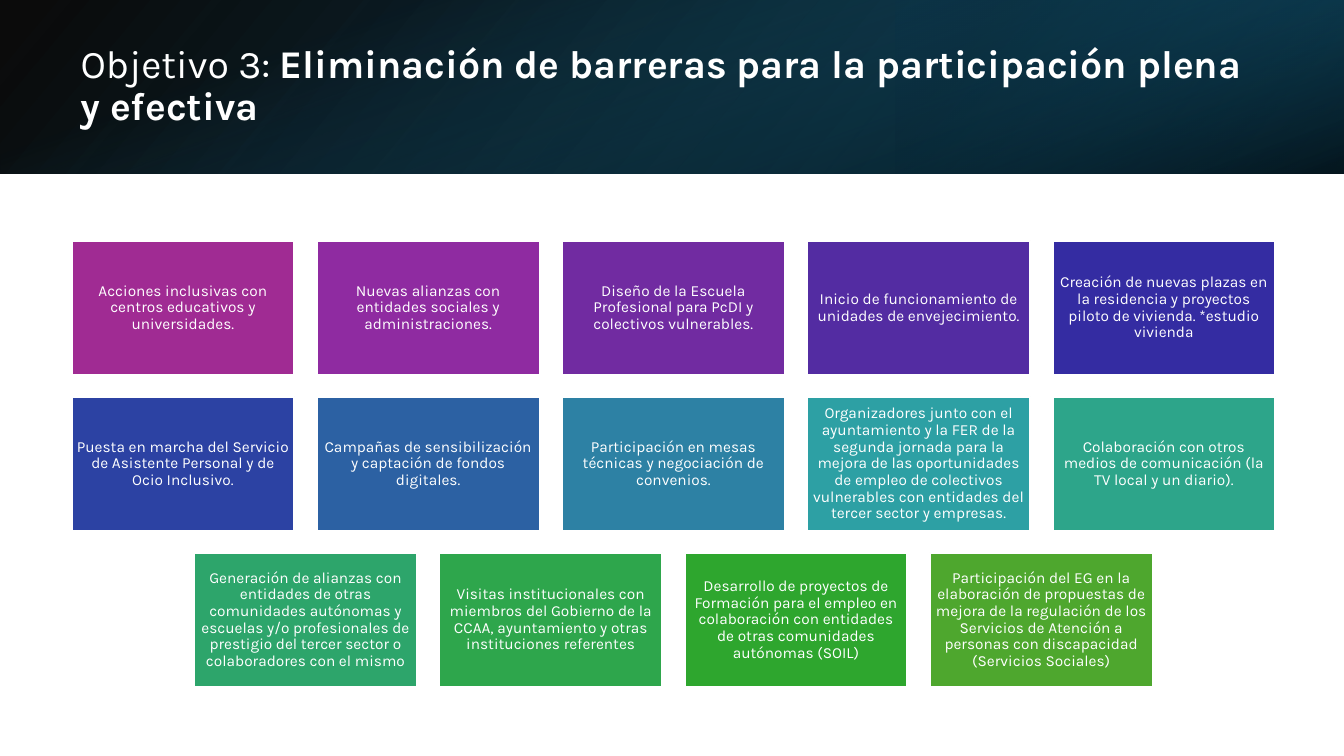
from lxml import etree
from pptx import Presentation
from pptx import util as u
from pptx.dml.color import RGBColor
from pptx.enum import shapes, text
from pptx.oxml import ns

WIDTH, HEIGHT = 13.33, 7.5
FONT = "Karla"
COLUMNS = 5
GAP = 0.1
CARD_RATIO = 0.6

ACTIONS = [
    ("A02B93", "Acciones inclusivas con centros educativos y universidades."),
    ("8F2BA1", "Nuevas alianzas con entidades sociales y administraciones."),
    ("712BA1", "Diseño de la Escuela Profesional para PcDI y colectivos vulnerables."),
    ("532CA2", "Inicio de funcionamiento de unidades de envejecimiento."),
    ("342CA2", "Creación de nuevas plazas en la residencia y proyectos piloto de "
               "vivienda. *estudio vivienda"),
    ("2C42A3", "Puesta en marcha del Servicio de Asistente Personal y de Ocio Inclusivo."),
    ("2C61A3", "Campañas de sensibilización y captación de fondos digitales."),
    ("2D81A4", "Participación en mesas técnicas y negociación de convenios."),
    ("2DA0A4", "Organizadores junto con el ayuntamiento y la FER de la segunda jornada "
               "para la mejora de las oportunidades de empleo de colectivos vulnerables "
               "con entidades del tercer sector y empresas."),
    ("2DA58A", "Colaboración con otros medios de comunicación (la TV local y un diario)."),
    ("2DA56B", "Generación de alianzas con entidades de otras comunidades autónomas y "
               "escuelas y/o profesionales de prestigio del tercer sector o "
               "colaboradores con el mismo"),
    ("2EA64C", "Visitas institucionales con miembros del Gobierno de la CCAA, "
               "ayuntamiento y otras instituciones referentes"),
    ("2EA62E", "Desarrollo de proyectos de Formación para el empleo en colaboración con "
               "entidades de otras comunidades autónomas (SOIL)"),
    ("4EA72E", "Participación del EG en la elaboración de propuestas de mejora de la "
               "regulación de los Servicios de Atención a personas con discapacidad "
               "(Servicios Sociales)"),
]


def rgb(value):
    """Turn a hex string into a colour."""
    return RGBColor.from_string(value)


def add_rect(s, x, y, w, h):
    """Add a rectangle without shadow, placed in inches."""
    sp = s.shapes.add_shape(shapes.MSO_SHAPE.RECTANGLE, *map(u.Inches, (x, y, w, h)))
    sp.shadow.inherit = False
    return sp


def add_gradient(s, box, stops, angle, rotation=0, flip=False):
    """Add a borderless rectangle with a two-stop translucent gradient."""
    sp = add_rect(s, *box)
    sp.rotation = rotation
    if flip:
        sp._element.spPr.xfrm.set("flipH", "1")
    sp.line.fill.background()
    sp.fill.gradient()
    sp.fill.gradient_angle = 360 - angle
    for stop, (position, color, opacity) in zip(sp.fill.gradient_stops, stops):
        stop.position = position / 100
        stop.color.rgb = rgb(color)
    colors = sp._element.spPr.findall(".//" + ns.qn("a:srgbClr"))
    for element, (_, _, opacity) in zip(colors, stops):
        etree.SubElement(element, ns.qn("a:alpha"), val=str(opacity * 1000))


def add_header(s, x, y, w, h):
    """Fill the header box with layered gradients and set the title over them."""
    add_gradient(s, (x, y, w, h), [(0, "000000", 96), (100, "104862", 100)], 140, flip=True)
    add_gradient(s, (x + w * 2 / 3, y, w / 3, h),
                 [(19, "0B3041", 68), (100, "156082", 79)], 320, 180, True)
    add_gradient(s, (x + (w - h) / 2, y + (h - w) / 2, h, w),
                 [(23, "156082", 0), (99, "000000", 74)], 340, 90)

    title = s.shapes.title
    s.shapes._spTree.append(title._element)
    title.left, title.top = u.Inches(x + 0.7), u.Inches(y + h * 0.22)
    title.width, title.height = u.Inches(w * 0.9), u.Inches(h * 0.56)
    tf = title.text_frame
    tf.word_wrap = True
    tf.auto_size = text.MSO_AUTO_SIZE.NONE
    tf.vertical_anchor = text.MSO_ANCHOR.MIDDLE
    p = tf.paragraphs[0]
    p.alignment = text.PP_ALIGN.LEFT
    p.add_run().text = "Objetivo 3: "
    r = p.add_run()
    r.text = "Eliminación de barreras para la participación plena y efectiva"
    r.font.bold = True
    style_paragraph(p, 28)


def style_paragraph(p, size):
    """Give a paragraph the white slide font and tight line spacing."""
    p.line_spacing = 0.9
    p.font.name, p.font.size = FONT, u.Pt(size)
    p.font.color.rgb = rgb("FFFFFF")


def add_card(s, x, y, w, h, color, label):
    """Add one coloured card with its centred label."""
    sp = add_rect(s, x, y, w, h)
    sp.fill.solid()
    sp.fill.fore_color.rgb = rgb(color)
    sp.line.color.rgb = rgb("FFFFFF")
    sp.line.width = u.Pt(1.5)
    tf = sp.text_frame
    tf.word_wrap = True
    tf.vertical_anchor = text.MSO_ANCHOR.MIDDLE
    tf.margin_left = tf.margin_right = tf.margin_top = tf.margin_bottom = u.Inches(0.05)
    p = tf.paragraphs[0]
    p.text = label
    p.alignment = text.PP_ALIGN.CENTER
    style_paragraph(p, 11)


def add_cards(s, x, y, w):
    """Lay the cards out in rows across the width, centring each row."""
    card_w = w / (COLUMNS + (COLUMNS - 1) * GAP)
    card_h, gap = card_w * CARD_RATIO, card_w * GAP
    for start in range(0, len(ACTIONS), COLUMNS):
        row = ACTIONS[start:start + COLUMNS]
        left = x + (COLUMNS - len(row)) * (card_w + gap) / 2
        top = y + start // COLUMNS * (card_h + gap)
        for column, (color, label) in enumerate(row):
            add_card(s, left + column * (card_w + gap), top, card_w, card_h, color, label)


def main():
    """Build and save the slide."""
    prs = Presentation()
    prs.slide_width, prs.slide_height = u.Inches(WIDTH), u.Inches(HEIGHT)
    s = prs.slides.add_slide(prs.slide_layouts[5])
    add_header(s, 0, 0, WIDTH, HEIGHT * 0.23)
    add_cards(s, 0.71, 2.39, 11.94)
    prs.save("out.pptx")


if __name__ == "__main__":
    main()
